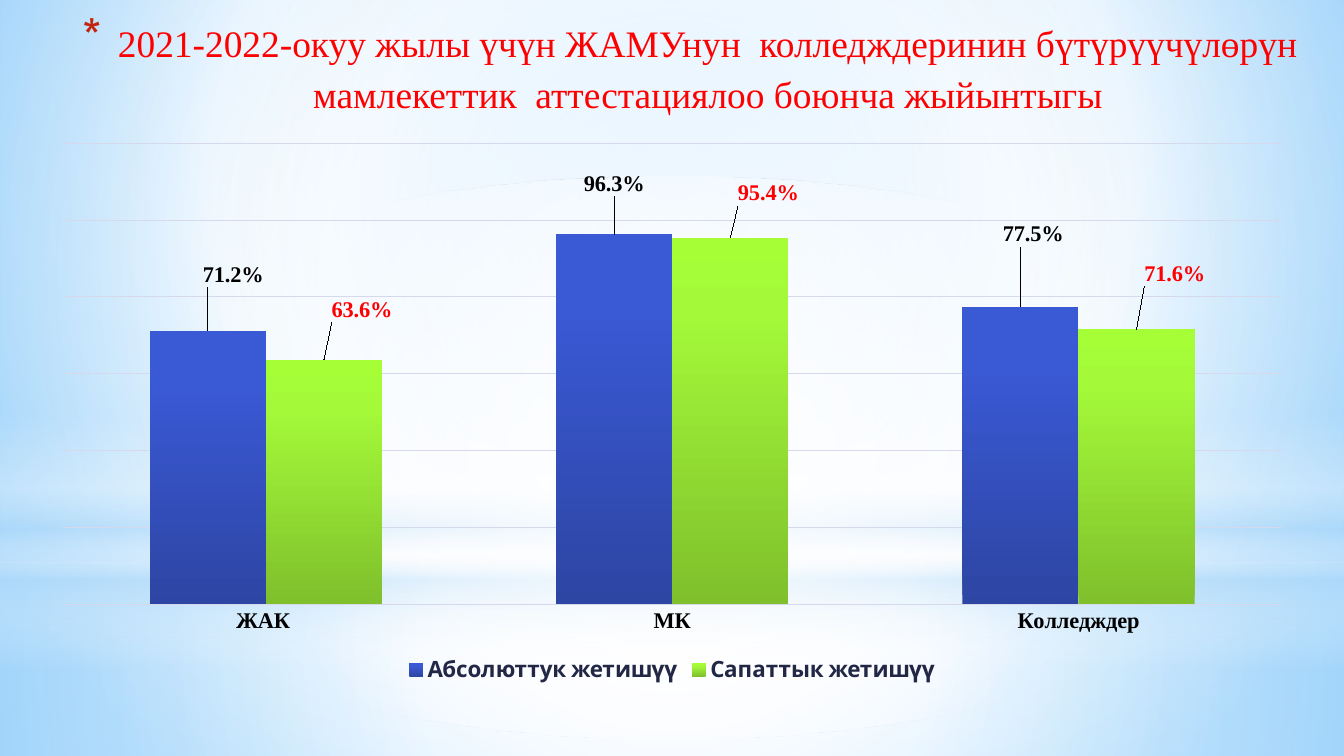
from lxml import etree
from pptx import Presentation
from pptx.chart.data import CategoryChartData
from pptx.dml.color import RGBColor
from pptx.enum.chart import XL_CHART_TYPE, XL_LABEL_POSITION, XL_LEGEND_POSITION, XL_TICK_MARK
from pptx.enum.shapes import MSO_SHAPE
from pptx.enum.text import MSO_ANCHOR, MSO_AUTO_SIZE, PP_ALIGN
from pptx.oxml.ns import qn
from pptx.util import Cm, Pt

RECT, OVAL = MSO_SHAPE.RECTANGLE, MSO_SHAPE.OVAL
COLUMN = XL_CHART_TYPE.COLUMN_CLUSTERED
ABOVE = XL_LABEL_POSITION.OUTSIDE_END
BOTTOM = XL_LEGEND_POSITION.BOTTOM
NO_TICK = XL_TICK_MARK.NONE

BLACK = RGBColor(0x00, 0x00, 0x00)
RED = RGBColor(0xFF, 0x00, 0x00)
NAVY = RGBColor(0x21, 0x27, 0x45)
PALE = RGBColor(0xD6, 0xD9, 0xEB)
RUST = RGBColor(0xC3, 0x26, 0x0C)
WHITE = RGBColor(0xFF, 0xFF, 0xFF)
ICE = RGBColor(0xB4, 0xDC, 0xFA)
SKY = RGBColor(0x9E, 0xD5, 0xFF)
AZURE = RGBColor(0x5B, 0xB9, 0xFF)
BLUES = RGBColor(0x2D, 0x45, 0xA3), RGBColor(0x3A, 0x59, 0xD4), RGBColor(0x37, 0x58, 0xD7)
GREENS = RGBColor(0x7F, 0xC0, 0x2C), RGBColor(0xA4, 0xF9, 0x39), RGBColor(0xA6, 0xFE, 0x36)

SERIF, SANS = "Times New Roman", "Cabin"
PERCENT = "0.0%"
TITLE = ("2021-2022-окуу жылы үчүн ЖАМУнун  колледждеринин бүтүрүүчүлөрүн "
         "мамлекеттик  аттестациялоо боюнча жыйынтыгы")
GROUPS = ["ЖАК ", "МК", "Колледждер"]
SERIES = [
    ("Абсолюттук жетишүү", (0.712, 0.963, 0.775), BLUES, BLACK,
     ((0.02, -0.07), (0, -0.06), (0.01, -0.1))),
    ("Сапаттык жетишүү", (0.636, 0.954, 0.716), GREENS, RED,
     ((0.03, -0.06), (0.03, -0.05), (0.03, -0.07))),
]
WIDE, HIGH = 33.87, 19.05
MID = (50, 50, 50, 50)
BACK = [(0, SKY, 100), (60, WHITE, 100), (100, AZURE, 100)]
GLOWS = [
    (RECT, 14.17, 4.88, [(0, WHITE, 91), (37, WHITE, 76), (100, ICE, 79)], MID),
    (RECT, 0, 14.17, [(0, WHITE, 89), (48, WHITE, 62), (100, ICE, 79)], MID),
    (RECT, 10.46, 6.35, [(0, WHITE, 0), (29, WHITE, 30), (45, ICE, 40),
                         (55, WHITE, 26), (65, ICE, 60), (100, WHITE, 0)], 90),
    (OVAL, 4.45, 14.17, [(0, WHITE, 100), (56, WHITE, 0)], MID),
]


def add(parent, tag, **attrs):
    return etree.SubElement(parent, qn(tag), {k: str(v) for k, v in attrs.items()})


def style(target, **values):
    for name, value in values.items():
        setattr(target, name, value)


def set_font(font, color, **values):
    style(font, **values)
    font.color.rgb = color


def shade(fill, owner, stops, way):
    fill.gradient()
    grad = owner.find(".//" + qn("a:gradFill"))
    del grad[:]
    group = add(grad, "a:gsLst")
    for place, color, alpha in stops:
        stop = add(group, "a:gs", pos=place * 1000)
        add(add(stop, "a:srgbClr", val=color), "a:alpha", val=alpha * 1000)
    if isinstance(way, tuple):
        focus = dict(zip("ltrb", (side * 1000 for side in way)))
        add(add(grad, "a:path", path="circle"), "a:fillToRect", **focus)
    else:
        add(grad, "a:lin", ang=way * 60000, scaled=0)


def lay_out(**values):
    layout = etree.Element(qn("c:layout"))
    manual = add(layout, "c:manualLayout")
    for name, value in values.items():
        add(manual, "c:" + name, val=value)
    return layout


def draw_back(slide):
    shade(slide.background.fill, slide._element, BACK, (20, 10, 20, 60))
    for kind, top, height, stops, way in GLOWS:
        glow = slide.shapes.add_shape(kind, 0, Cm(top), Cm(WIDE), Cm(height))
        glow.shadow.inherit = False
        glow.line.fill.background()
        shade(glow.fill, glow._element.spPr, stops, way)


def draw_chart(slide):
    data = CategoryChartData(number_format=PERCENT)
    data.categories = GROUPS
    for name, values, *_ in SERIES:
        data.add_series(name, values)
    chart = slide.shapes.add_chart(COLUMN, Cm(0.94), Cm(3.33), Cm(32), Cm(14), data).chart
    style(chart, has_title=False, has_legend=True)
    set_font(chart.font, BLACK, name=SANS, size=Pt(10))
    style(chart.legend, position=BOTTOM, include_in_layout=False)
    set_font(chart.legend.font, NAVY, name=SANS, size=Pt(16), bold=True)

    bold = dict(name=SERIF, size=Pt(16), bold=True)
    base, scale = chart.category_axis, chart.value_axis
    style(base, major_tick_mark=NO_TICK, minor_tick_mark=NO_TICK)
    set_font(base.tick_labels.font, BLACK, **bold)
    style(scale, visible=False, minimum_scale=0, maximum_scale=1.2,
          major_unit=0.2, has_major_gridlines=True)
    for line in (base.format.line, scale.major_gridlines.format.line):
        line.color.rgb = PALE
        line.width = Pt(0.75)

    area = chart._chartSpace.chart.plotArea
    for old in area.findall(qn("c:layout")):
        area.remove(old)
    area.insert(0, lay_out(layoutTarget="inner", xMode="edge", yMode="edge",
                           x="0.02", y="0.02", w="0.96", h="0.83"))
    plot = chart.plots[0]
    style(plot, gap_width=150, overlap=0, vary_by_categories=False)
    for bars, (_, _, colors, ink, shifts) in zip(plot.series, SERIES):
        stops = [(p, c, 100) for p, c in zip((0, 80, 100), colors)]
        shade(bars.format.fill, bars._element, stops, 270)
        style(bars.data_labels, show_value=True, position=ABOVE,
              number_format=PERCENT, number_format_is_linked=False)
        set_font(bars.data_labels.font, ink, **bold)
        for spot, (x, y) in enumerate(shifts):
            label = bars.points[spot].data_label
            set_font(label.font, ink, **bold)
            label.position = ABOVE
            mark = bars.data_labels._element.findall(qn("c:dLbl"))[spot]
            mark.find(qn("c:idx")).addnext(lay_out(x=x, y=y))


def draw_title(slide):
    title = slide.shapes.title
    style(title, left=Cm(0.94), top=Cm(0.2), width=Cm(32.94), height=Cm(2.13))
    slide.shapes._spTree.append(title._element)
    frame = title.text_frame
    style(frame, word_wrap=True, auto_size=MSO_AUTO_SIZE.NONE, vertical_anchor=MSO_ANCHOR.TOP)
    frame.text = TITLE
    para = frame.paragraphs[0]
    style(para, alignment=PP_ALIGN.CENTER, line_spacing=1.15,
          space_before=Pt(0), space_after=Pt(13.3))
    props = para._p.get_or_add_pPr()
    props.set("marL", str(Cm(0.89)))
    props.set("indent", str(-Cm(0.89)))
    add(add(props, "a:buClr"), "a:srgbClr", val=RUST)
    add(props, "a:buSzPct", val=128000)
    add(props, "a:buChar", char="*")
    set_font(para.runs[0].font, RED, name=SERIF, size=Pt(26.7))


def main():
    deck = Presentation()
    style(deck, slide_width=Cm(WIDE), slide_height=Cm(HIGH))
    slide = deck.slides.add_slide(deck.slide_layouts[5])
    draw_back(slide)
    draw_chart(slide)
    draw_title(slide)
    deck.save("out.pptx")


if __name__ == "__main__":
    main()
